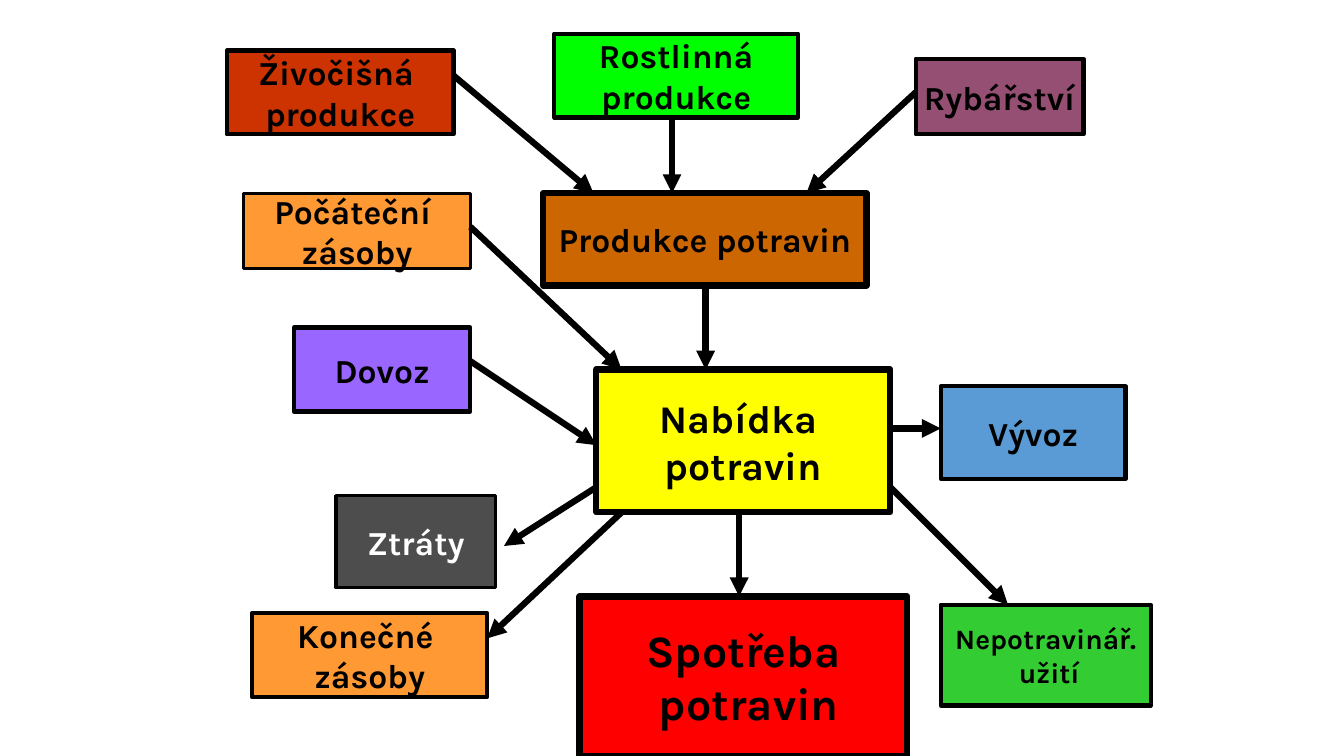
"""Draw a flow diagram of food supply and consumption."""
from lxml.etree import SubElement
from pptx import Presentation
from pptx.dml.color import RGBColor
from pptx.enum.shapes import MSO_CONNECTOR, MSO_SHAPE
from pptx.enum.text import MSO_ANCHOR, PP_ALIGN
from pptx.oxml.ns import qn
from pptx.util import Pt

FONT = "Karla"
BLACK, WHITE = "000000", "FFFFFF"

# lines, (left, top, width, height), fill, border, text size, text colour
BOXES = [
    (["Rostlinná", "produkce"], (396, 24, 174, 60), "00FF00", 3, 24, BLACK),
    (["Rybářství"], (654, 42, 120, 54), "954F72", 3, 24, BLACK),
    (["Živočišná ", "produkce"], (162, 36, 162, 60), "CC3300", 3, 24, BLACK),
    (["Produkce potravin"], (388, 138, 231, 66), "CC6600", 4.5, 24, BLACK),
    (["Nabídka ", "potravin"], (426, 264, 210, 102), "FFFF00", 4.5, 28, BLACK),
    (["Dovoz"], (210, 234, 126, 60), "9966FF", 3, 24, BLACK),
    (["Vývoz"], (672, 276, 132, 66), "5B9BD5", 3, 24, BLACK),
    (["Ztráty"], (240, 354, 114, 66), "4D4D4D", 2.25, 24, WHITE),
    (["Spotřeba", " potravin"], (414, 426, 234, 114), "FF0000", 4.5, 32, BLACK),
    (["Nepotravinář.", " užití"], (672, 432, 150, 72), "33CC33", 3, 20, BLACK),
    (["Počáteční ", "zásoby"], (174, 138, 162, 54), "FF9933", 2.25, 24, BLACK),
    (["Konečné ", "zásoby"], (180, 438, 168, 60), "FF9933", 3, 24, BLACK),
]

# start x, start y, end x, end y
ARROWS = [
    (336, 258, 426, 318),
    (336, 162, 444, 264),
    (480, 84, 480, 138),
    (324, 54, 424, 138),
    (654, 66, 576, 138),
    (636, 306, 672, 306),
    (426, 348, 360, 390),
    (528, 366, 528, 426),
    (444, 366, 348, 456),
    (636, 348, 720, 432),
    (504, 204, 504, 264),
]


def paint(part, color):
    part.solid()
    part.fore_color.rgb = RGBColor.from_string(color)


def add_box(slide, lines, area, fill, border, size, color):
    box = slide.shapes.add_shape(MSO_SHAPE.RECTANGLE, *map(Pt, area))
    box.shadow.inherit = False
    paint(box.fill, fill)
    paint(box.line.fill, BLACK)
    box.line.width = Pt(border)
    frame = box.text_frame
    frame.word_wrap = False
    frame.vertical_anchor = MSO_ANCHOR.MIDDLE
    for i, line in enumerate(lines):
        para = frame.add_paragraph() if i else frame.paragraphs[0]
        para.alignment = PP_ALIGN.CENTER
        run = para.add_run()
        run.text = line
        run.font.name = FONT
        run.font.size = Pt(size)
        run.font.bold = True
        paint(run.font.fill, color)


def add_arrow(slide, ends):
    arrow = slide.shapes.add_connector(MSO_CONNECTOR.STRAIGHT, *map(Pt, ends))
    paint(arrow.line.fill, BLACK)
    arrow.line.width = Pt(4.5)
    props = arrow.element.spPr
    SubElement(props.find(qn("a:ln")), qn("a:tailEnd"), type="triangle")
    SubElement(props, qn("a:effectLst"))


def main():
    deck = Presentation()
    deck.slide_width, deck.slide_height = Pt(960), Pt(540)
    slide = deck.slides.add_slide(deck.slide_layouts[6])
    for box in BOXES:
        add_box(slide, *box)
    for ends in ARROWS:
        add_arrow(slide, ends)
    deck.save("out.pptx")


if __name__ == "__main__":
    main()
